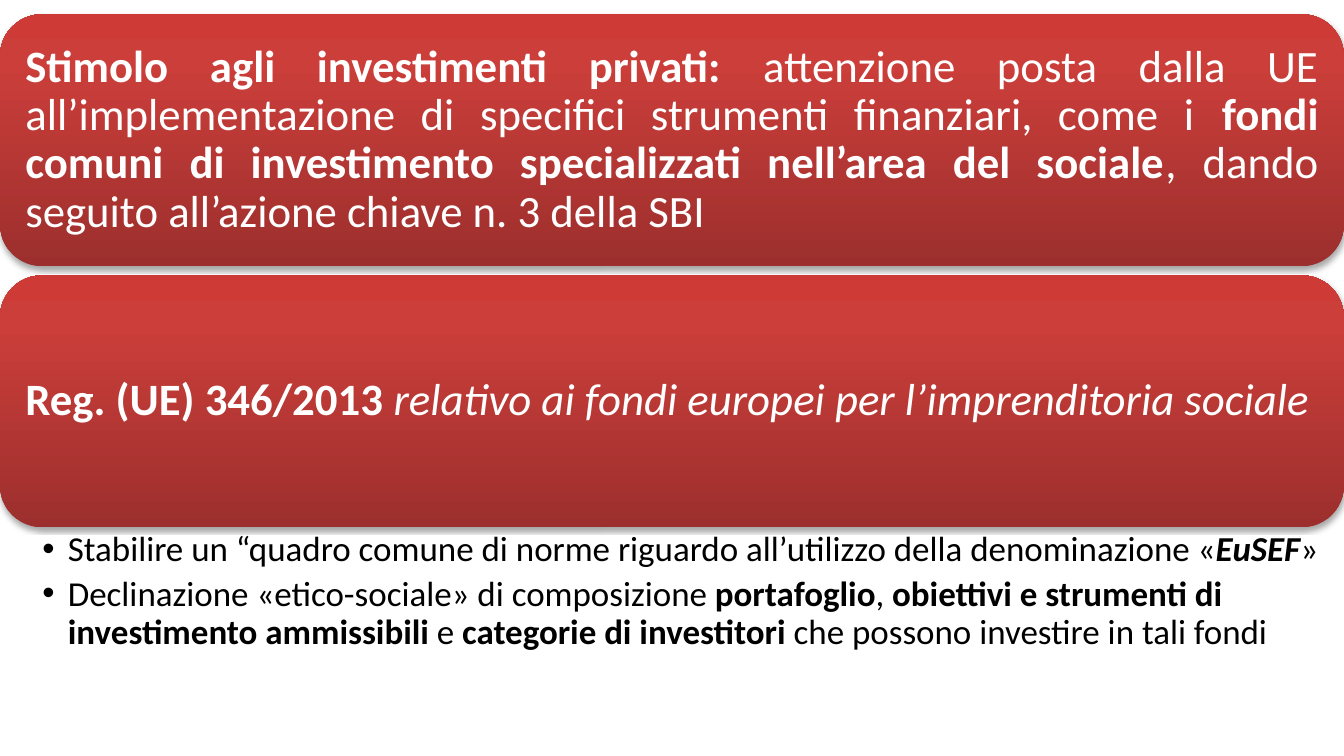
from lxml import etree
from pptx import Presentation
from pptx import util as u
from pptx.dml.color import RGBColor
from pptx.enum import shapes, text
from pptx.oxml import ns

CARDS = [
    [("Stimolo agli investimenti privati: ", "b"),
     ("attenzione posta dalla UE all’implementazione di specifici strumenti finanziari, come i ", ""),
     ("fondi comuni di investimento specializzati nell’area del sociale", "b"),
     (", dando seguito all’azione chiave n. 3 della SBI", "")],
    [("Reg. (UE) 346/2013 ", "b"),
     ("relativo ai fondi europei per l’imprenditoria sociale", "i")],
]
AIMS = [
    [("Stabilire un “quadro comune di norme riguardo all’utilizzo della denominazione «", ""),
     ("EuSEF", "bi"),
     ("»", "")],
    [("Declinazione «etico-sociale» di composizione ", ""),
     ("portafoglio", "b"),
     (", ", ""),
     ("obiettivi e strumenti di investimento ammissibili", "b"),
     (" e ", ""),
     ("categorie di investitori ", "b"),
     ("che possono investire in tali fondi", "")],
]
THEME = {
    "font": "Calibri",
    "card": {"size": 32, "color": "FFFFFF"},
    "list": {"size": 25, "color": "000000"},
    "stops": [(0, "9C2F2D"), (80, "CB3E3A"), (100, "CE3B37")],
    "shade": "000000",
}
WIDE, HIGH = u.Cm(33.87), u.Cm(19.05)
TOP, TALL, GAP = u.Cm(0.36), u.Cm(6.35), u.Cm(0.23)
PAD = u.Cm(0.33)
HANG = u.Cm(0.64)


def apply(item, values):
    for name, value in values.items():
        setattr(item, name, value)


def write(para, runs, look, form):
    apply(para, form)
    for words, marks in runs:
        run = para.add_run()
        run.text = words
        apply(run.font, {"name": THEME["font"], "size": u.Pt(look["size"]),
                         "bold": "b" in marks, "italic": "i" in marks})
        run.font.color.rgb = RGBColor.from_string(look["color"])


def paint(card):
    space = ns.nsdecls("a")
    stops = "".join(
        f'<a:gs pos="{pos * 1000}"><a:srgbClr val="{color}"/></a:gs>'
        for pos, color in THEME["stops"])
    props = card._element.spPr
    props.append(etree.fromstring(
        f'<a:gradFill {space} rotWithShape="1"><a:gsLst>{stops}</a:gsLst>'
        '<a:lin ang="16200000" scaled="0"/></a:gradFill>'))
    card.line.fill.background()
    props.append(etree.fromstring(
        f'<a:effectLst {space}><a:outerShdw blurRad="{u.Pt(3.1)}" dist="{u.Pt(1.8)}" '
        f'dir="5400000" rotWithShape="0"><a:srgbClr val="{THEME["shade"]}">'
        '<a:alpha val="35000"/></a:srgbClr></a:outerShdw></a:effectLst>'))


def add_card(slide, row, runs):
    top = TOP + row * (TALL + GAP)
    card = slide.shapes.add_shape(
        shapes.MSO_SHAPE.ROUNDED_RECTANGLE, 0, top, WIDE, TALL)
    paint(card)
    frame = card.text_frame
    apply(frame, {"word_wrap": True, "vertical_anchor": text.MSO_ANCHOR.MIDDLE,
                  "margin_left": PAD, "margin_right": PAD,
                  "margin_top": PAD, "margin_bottom": PAD})
    write(frame.paragraphs[0], runs, THEME["card"],
          {"alignment": text.PP_ALIGN.JUSTIFY, "line_spacing": 0.9})


def fill_list(body):
    top = TOP + len(CARDS) * (TALL + GAP) - GAP
    apply(body, {"left": 0, "top": top, "width": WIDE, "height": u.Cm(5.41)})
    frame = body.text_frame
    apply(frame, {"word_wrap": True, "auto_size": text.MSO_AUTO_SIZE.NONE,
                  "vertical_anchor": text.MSO_ANCHOR.TOP,
                  "margin_left": u.Cm(1.07), "margin_right": u.Cm(0.64),
                  "margin_top": u.Cm(0.1), "margin_bottom": u.Cm(0.1)})
    for row, runs in enumerate(AIMS):
        para = frame.add_paragraph() if row else frame.paragraphs[0]
        write(para, runs, THEME["list"],
              {"alignment": text.PP_ALIGN.LEFT, "line_spacing": 0.9,
               "space_before": u.Pt(0), "space_after": u.Pt(5)})
        props = para._p.get_or_add_pPr()
        props.set("marL", str(HANG))
        props.set("indent", str(-HANG))


def main():
    deck = Presentation()
    apply(deck, {"slide_width": WIDE, "slide_height": HIGH})
    slide = deck.slides.add_slide(deck.slide_layouts[1])
    title = slide.shapes.title._element
    title.getparent().remove(title)
    for row, runs in enumerate(CARDS):
        add_card(slide, row, runs)
    fill_list(slide.placeholders[1])
    deck.save("out.pptx")


if __name__ == "__main__":
    main()
